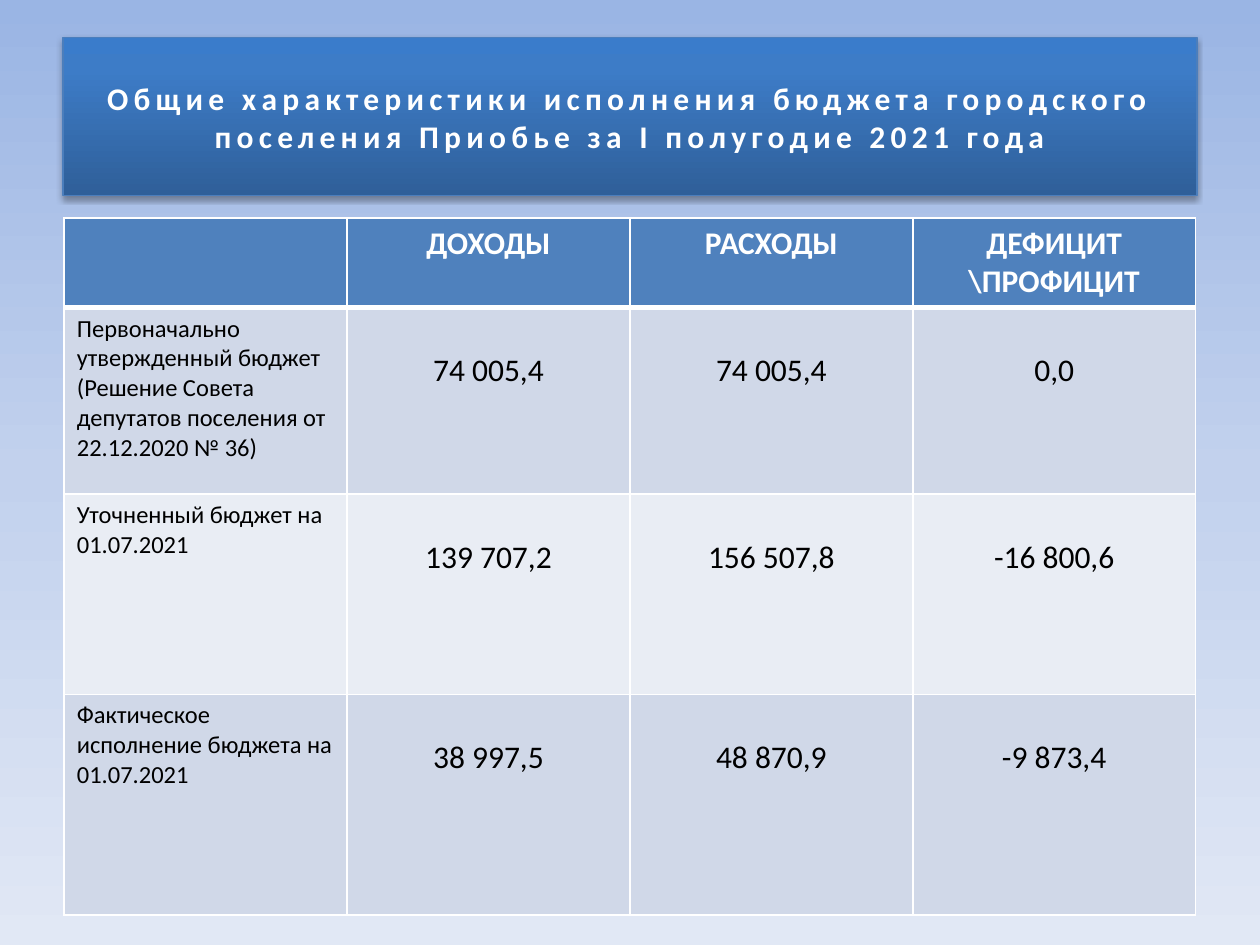
from typing import NamedTuple

from lxml.etree import SubElement
from pptx import Presentation
from pptx.dml.color import RGBColor
from pptx.enum.shapes import MSO_SHAPE as Shape
from pptx.enum.text import MSO_ANCHOR as Anchor, PP_ALIGN as Align
from pptx.oxml.ns import qn
from pptx.util import Inches, Pt

FONT = "Calibri"
WHITE, BLACK = "FFFFFF", "000000"
HEADER_FILL = "4F81BD"
BAND_FILLS = ("D0D8E8", "E9EDF4")


class BudgetRow(NamedTuple):
    label: str
    amounts: tuple[str, str, str]
    height: float


HEADINGS = ("", "ДОХОДЫ", "РАСХОДЫ", "ДЕФИЦИТ \\ПРОФИЦИТ")
HEADER_HEIGHT = 0.7
ROWS = (
    BudgetRow("Первоначально утвержденный бюджет (Решение Совета депутатов "
              "поселения от 22.12.2020 № 36)", ("74 005,4", "74 005,4", "0,0"), 1.48),
    BudgetRow("Уточненный бюджет на 01.07.2021",
              ("139 707,2", "156 507,8", "-16 800,6"), 1.59),
    BudgetRow("Фактическое исполнение бюджета на 01.07.2021",
              ("38 997,5", "48 870,9", "-9 873,4"), 1.75),
)


def color(value: str) -> RGBColor:
    return RGBColor.from_string(value)


def set_gradient(fill, element, stops, angle: int) -> None:
    """Fill with (percent, colour) stops; the angle runs clockwise in degrees."""
    fill.gradient()
    stop_list = next(element.iter(qn("a:gsLst")))
    stop_list.clear()
    for percent, value in stops:
        stop = SubElement(stop_list, qn("a:gs"), pos=str(percent * 1000))
        SubElement(stop, qn("a:srgbClr"), val=value)
    next(element.iter(qn("a:lin"))).set("ang", str(angle * 60000))


def write(frame, text: str, *, size=18, ink=BLACK, bold=False,
          align=Align.CENTER, spacing=0) -> None:
    frame.word_wrap = True
    para = frame.paragraphs[0]
    para.alignment = align
    para.font.size = Pt(size)
    if not text:
        return
    span = para.add_run()
    span.text = text
    span.font.name = FONT
    span.font.size = Pt(size)
    span.font.bold = bold
    span.font.color.rgb = color(ink)
    if spacing:
        span.font._element.set("spc", str(spacing * 100))


def add_shadow(shape) -> None:
    """Give the shape a soft shadow straight below it."""
    shape.shadow.inherit = False
    effects = shape.element.spPr.find(qn("a:effectLst"))
    shadow = SubElement(effects, qn("a:outerShdw"), blurRad=str(Pt(3.1)),
                        dist=str(Pt(1.8)), dir="5400000", rotWithShape="0")
    ink = SubElement(shadow, qn("a:srgbClr"), val=BLACK)
    SubElement(ink, qn("a:alpha"), val="35000")


def style_cell(cell, fill: str, *, top=1, bottom=1) -> None:
    """Set white borders, then the fill, in the order the schema asks for."""
    properties = cell._tc.get_or_add_tcPr()
    for side, width in (("L", 1), ("R", 1), ("T", top), ("B", bottom)):
        line = SubElement(properties, qn(f"a:ln{side}"), w=str(Pt(width)))
        paint = SubElement(line, qn("a:solidFill"))
        SubElement(paint, qn("a:srgbClr"), val=WHITE)
    cell.fill.solid()
    cell.fill.fore_color.rgb = color(fill)


def add_title(page) -> None:
    box = page.shapes.add_shape(Shape.RECTANGLE, Inches(0.5), Inches(0.3),
                                Inches(9), Inches(1.25))
    set_gradient(box.fill, box.element,
                 ((0, "2F5F99"), (80, "3D7CC7"), (100, "3A7CCB")), 270)
    box.line.color.rgb = color("4B7EBC")
    box.line.width = Pt(0.75)
    add_shadow(box)
    box.text_frame.vertical_anchor = Anchor.MIDDLE
    write(box.text_frame, "Общие характеристики исполнения бюджета городского "
          "поселения Приобье за I полугодие 2021 года",
          ink=WHITE, bold=True, spacing=3)


def add_budget_table(page) -> None:
    heights = [HEADER_HEIGHT] + [row.height for row in ROWS]
    table = page.shapes.add_table(len(heights), len(HEADINGS), Inches(0.51), Inches(1.73),
                                  Inches(8.98), Inches(sum(heights))).table
    for table_row, height in zip(table.rows, heights):
        table_row.height = Inches(height)

    for column, heading in enumerate(HEADINGS):
        cell = table.cell(0, column)
        style_cell(cell, HEADER_FILL, bottom=3)
        write(cell.text_frame, heading, ink=WHITE, bold=True)

    for index, row in enumerate(ROWS, start=1):
        for column, text in enumerate((row.label, *row.amounts)):
            cell = table.cell(index, column)
            style_cell(cell, BAND_FILLS[(index - 1) % 2], top=3 if index == 1 else 1)
            if column == 0:
                write(cell.text_frame, text, size=14, align=Align.LEFT)
            else:
                cell.margin_top = Inches(0.35)
                write(cell.text_frame, text)


def main() -> None:
    deck = Presentation()
    deck.slide_width, deck.slide_height = Inches(10), Inches(7.5)
    page = deck.slides.add_slide(deck.slide_layouts[6])
    set_gradient(page.background.fill, page.element,
                 ((0, "9AB5E4"), (50, "C2D1ED"), (100, "E1E8F5")), 90)
    add_title(page)
    add_budget_table(page)
    deck.save("out.pptx")


if __name__ == "__main__":
    main()
